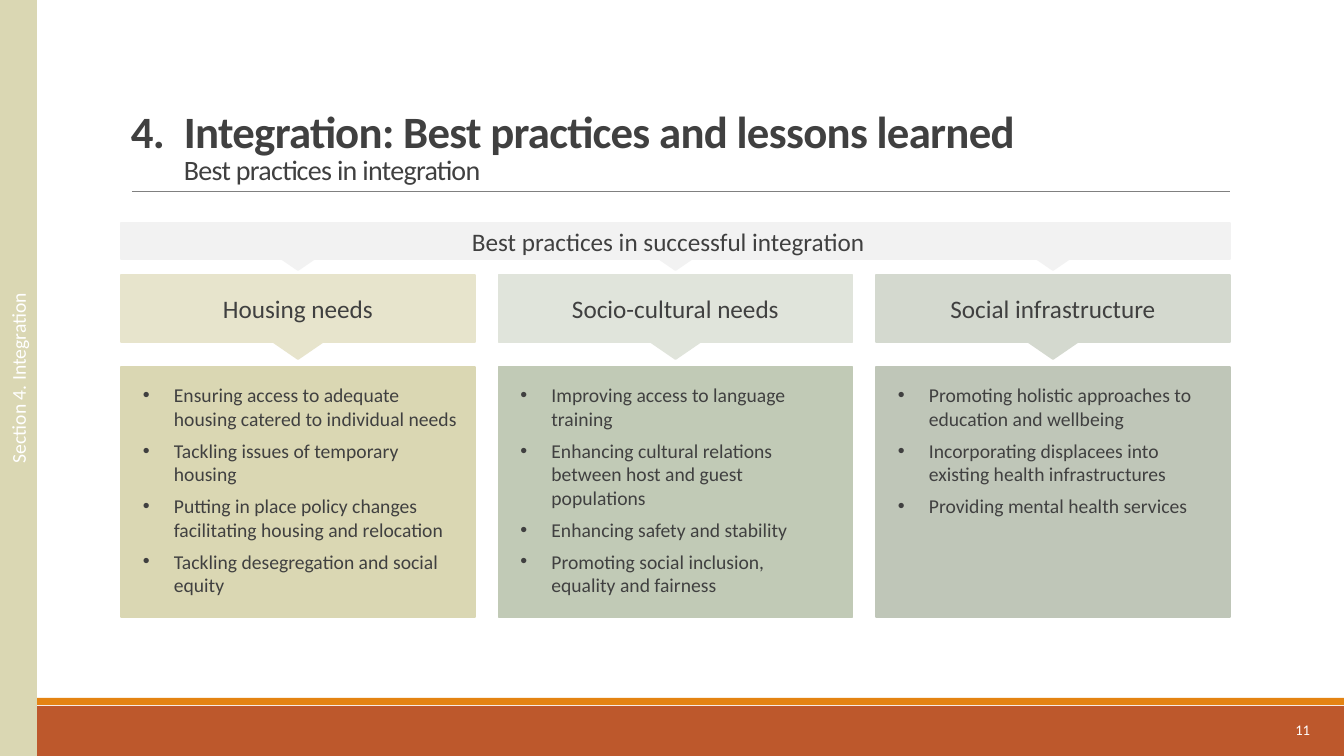
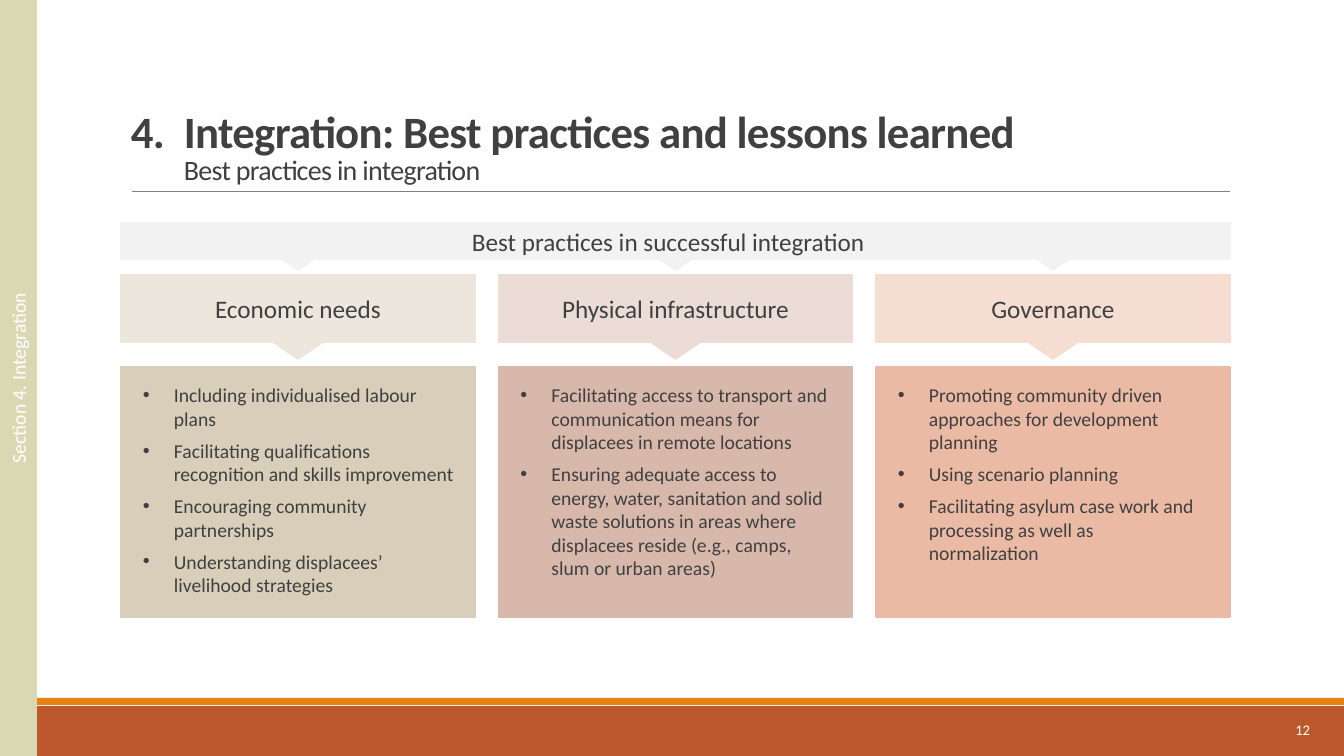
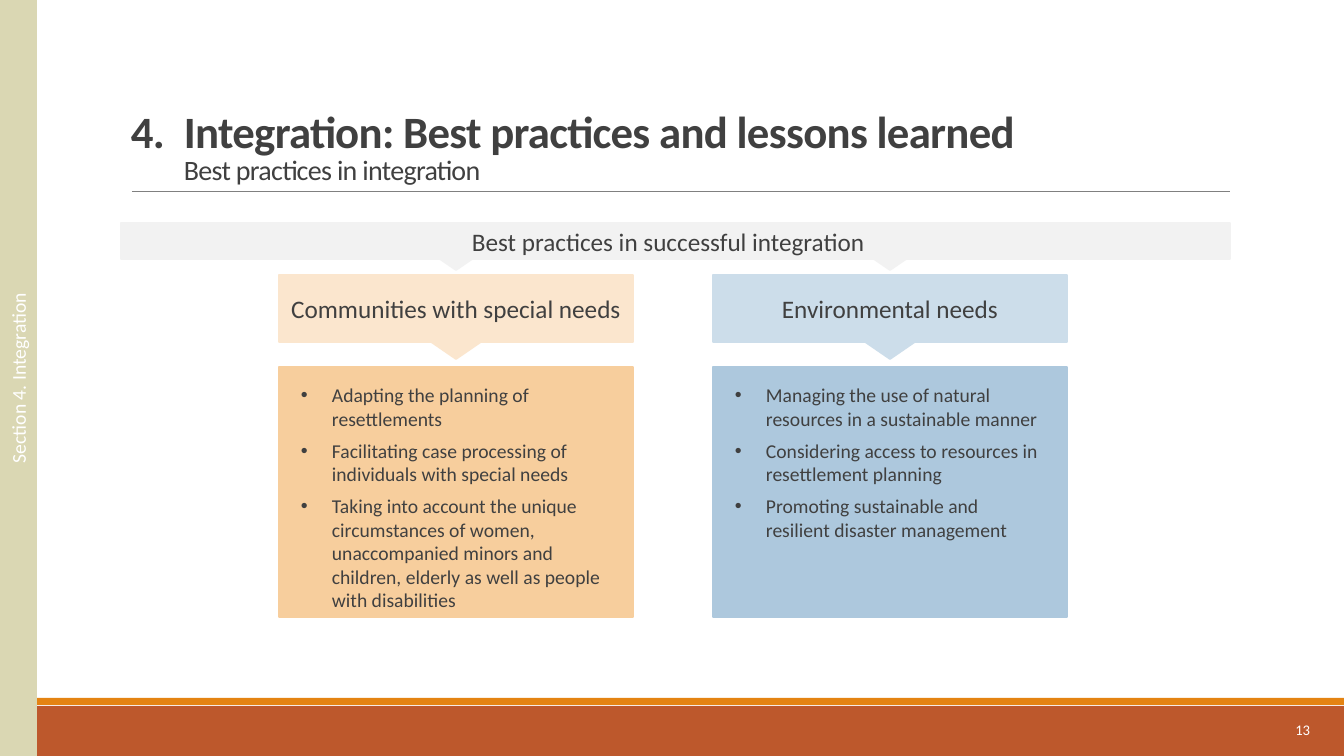
from lxml.etree import SubElement
from pptx import Presentation
from pptx.dml.color import RGBColor
from pptx.enum.shapes import MSO_CONNECTOR, MSO_SHAPE
from pptx.enum.text import MSO_ANCHOR, PP_ALIGN
from pptx.oxml.ns import qn
from pptx.util import Pt

SLIDE_WIDTH, SLIDE_HEIGHT = 1344, 756
EMU_PER_PX = 12192000 / SLIDE_WIDTH

FONT = "Calibri"
DARK, WHITE, PALE_GREY, RULE_GREY = "404040", "FFFFFF", "F2F2F2", "808080"
RUST, ORANGE, SAND = "BD582C", "E48312", "DAD7B3"

SECTION = "Section 4. Integration"
TITLE = "4.\tIntegration: Best practices and lessons learned"
SUBTITLE = "Best practices in integration"
BANNER = "Best practices in successful integration"

BANNER_LEFT, BANNER_WIDTH = 121, 1109
COLUMN_WIDTH = 354
BULLET_WIDTHS = (335, 328, 328)
POINTER_WIDTH, POINTER_HEIGHT = 67, 23

# Each slide: number, left and width of the row of columns, and the columns
# as (heading, heading colour, body colour, bullets).
SLIDES = [
    (11, BANNER_LEFT, BANNER_WIDTH, [
        ("Housing needs", "E7E4CC", "DAD7B3", [
            "Ensuring access to adequate housing catered to individual needs",
            "Tackling issues of temporary housing",
            "Putting in place policy changes facilitating housing and relocation",
            "Tackling desegregation and social equity"]),
        ("Socio-cultural needs", "E0E4DB", "C1CAB6", [
            "Improving access to language training",
            "Enhancing cultural relations between host and guest populations",
            "Enhancing safety and stability",
            "Promoting social inclusion, equality and fairness"]),
        ("Social infrastructure", "D4D9CF", "BFC6B8", [
            "Promoting holistic approaches to education and wellbeing",
            "Incorporating displacees into existing health infrastructures",
            "Providing mental health services"]),
    ]),
    (12, BANNER_LEFT, BANNER_WIDTH, [
        ("Economic needs", "ECE6DD", "D8CEBA", [
            "Including individualised labour plans",
            "Facilitating qualifications recognition and skills improvement",
            "Encouraging community partnerships",
            "Understanding displacees’ livelihood strategies"]),
        ("Physical infrastructure", "EBDCD5", "D7B8AB", [
            "Facilitating access to transport and communication means for "
            "displacees in remote locations",
            "Ensuring adequate access to energy, water, sanitation and solid waste "
            "solutions in areas where displacees reside (e.g., camps, slum or "
            "urban areas)"]),
        ("Governance", "F5DDD2", "EABAA5", [
            "Promoting community driven approaches for development planning",
            "Using scenario planning",
            "Facilitating asylum case work and processing as well as normalization"]),
    ]),
    (13, 279, 788, [
        ("Communities with special needs", "FBE6CE", "F7CE9D", [
            "Adapting the planning of resettlements",
            "Facilitating case processing of individuals with special needs",
            "Taking into account the unique circumstances of women, unaccompanied "
            "minors and children, elderly as well as people with disabilities"]),
        ("Environmental needs", "CCDDEA", "ADC8DD", [
            "Managing the use of natural resources in a sustainable manner",
            "Considering access to resources in resettlement planning",
            "Promoting sustainable and resilient disaster management"]),
    ]),
]


def px(length):
    return round(length * EMU_PER_PX)


def color(hex_string):
    return RGBColor.from_string(hex_string)


def add_block(slide, left, top, width, height, fill, outlined=True,
              kind=MSO_SHAPE.RECTANGLE):
    shape = slide.shapes.add_shape(kind, px(left), px(top), px(width), px(height))
    shape.shadow.inherit = False
    shape.fill.solid()
    shape.fill.fore_color.rgb = color(fill)
    if outlined:
        shape.line.color.rgb = color(fill)
        shape.line.width = Pt(1.25)
    else:
        shape.line.fill.background()
    return shape


def add_pointer(slide, center, top, fill):
    """Triangle pointing down from the block above."""
    pointer = add_block(slide, center - POINTER_WIDTH / 2, top, POINTER_WIDTH,
                        POINTER_HEIGHT, fill, kind=MSO_SHAPE.ISOSCELES_TRIANGLE)
    pointer.rotation = 180


def add_text_box(slide, left, top, width, height):
    return slide.shapes.add_textbox(px(left), px(top), px(width), px(height))


def write(shape, lines, size, font_color=DARK, align=PP_ALIGN.LEFT,
          anchor=MSO_ANCHOR.TOP):
    """Fill a shape with one paragraph per line and return the paragraphs."""
    frame = shape.text_frame
    frame.text = "\n".join(lines)
    frame.word_wrap = True
    frame.vertical_anchor = anchor
    for paragraph in frame.paragraphs:
        paragraph.alignment = align
        for run in paragraph.runs:
            run.font.name = FONT
            run.font.size = Pt(size)
            run.font.color.rgb = color(font_color)
    return frame.paragraphs


def set_hanging_indent(paragraph, indent):
    properties = paragraph._p.get_or_add_pPr()
    properties.set("marL", str(px(indent)))
    properties.set("indent", str(-px(indent)))
    return properties


def add_frame(slide, number):
    """Bands, rule, title, slide number and section tab shared by all slides."""
    add_block(slide, 0, 706, SLIDE_WIDTH, 50, RUST, outlined=False)
    add_block(slide, 0, 698, SLIDE_WIDTH, 7, ORANGE, outlined=False)

    rule = slide.shapes.add_connector(MSO_CONNECTOR.STRAIGHT,
                                      px(132), px(191), px(1230), px(191))
    rule.line.color.rgb = color(RULE_GREY)
    rule.line.width = Pt(0.5)
    SubElement(rule._element.spPr, qn("a:effectLst"))

    title_box = add_text_box(slide, 121, 31, 1153, 160)
    title, = write(title_box, [f"{TITLE}\v{SUBTITLE}"], 32, anchor=MSO_ANCHOR.BOTTOM)
    set_hanging_indent(title, 53)
    title.line_spacing = 0.85
    main_run, subtitle_run = title.runs
    main_run.font.bold = True
    subtitle_run.font.size = Pt(20)
    for run in title.runs:
        run.font._element.set("spc", "-50")

    write(add_text_box(slide, 1176, 710, 144, 40), [str(number)], 10.5, WHITE,
          PP_ALIGN.RIGHT, MSO_ANCHOR.MIDDLE)

    tab = add_block(slide, 0, 0, 36, SLIDE_HEIGHT, SAND)
    write(tab, [SECTION], 14, WHITE, PP_ALIGN.CENTER, MSO_ANCHOR.MIDDLE)
    tab.text_frame._txBody.bodyPr.set("vert", "vert270")


def add_column(slide, left, bullet_width, heading, heading_fill, body_fill, bullets):
    center = left + COLUMN_WIDTH / 2
    add_pointer(slide, center, 247, PALE_GREY)
    add_pointer(slide, center, 336, heading_fill)
    header = add_block(slide, left, 275, COLUMN_WIDTH, 67, heading_fill)
    write(header, [heading], 18, align=PP_ALIGN.CENTER, anchor=MSO_ANCHOR.MIDDLE)

    add_block(slide, left, 367, COLUMN_WIDTH, 250, body_fill)
    bullet_box = add_text_box(slide, left + 12, 378, bullet_width, 226)
    for paragraph in write(bullet_box, bullets, 14):
        properties = set_hanging_indent(paragraph, 31)
        SubElement(properties, qn("a:buFont"), typeface="Arial")
        SubElement(properties, qn("a:buChar"), char="•")
        paragraph.space_after = Pt(6)


def main():
    presentation = Presentation()
    presentation.slide_width = px(SLIDE_WIDTH)
    presentation.slide_height = px(SLIDE_HEIGHT)
    for number, row_left, row_width, columns in SLIDES:
        slide = presentation.slides.add_slide(presentation.slide_layouts[6])
        add_frame(slide, number)
        step = (row_width - COLUMN_WIDTH) / (len(columns) - 1)
        for index, (column, bullet_width) in enumerate(zip(columns, BULLET_WIDTHS)):
            add_column(slide, row_left + index * step, bullet_width, *column)
        add_block(slide, BANNER_LEFT, 223, BANNER_WIDTH, 36, PALE_GREY)
        write(add_text_box(slide, 462, 221, 473, 40), [BANNER], 18)
    presentation.save("out.pptx")


if __name__ == "__main__":
    main()
